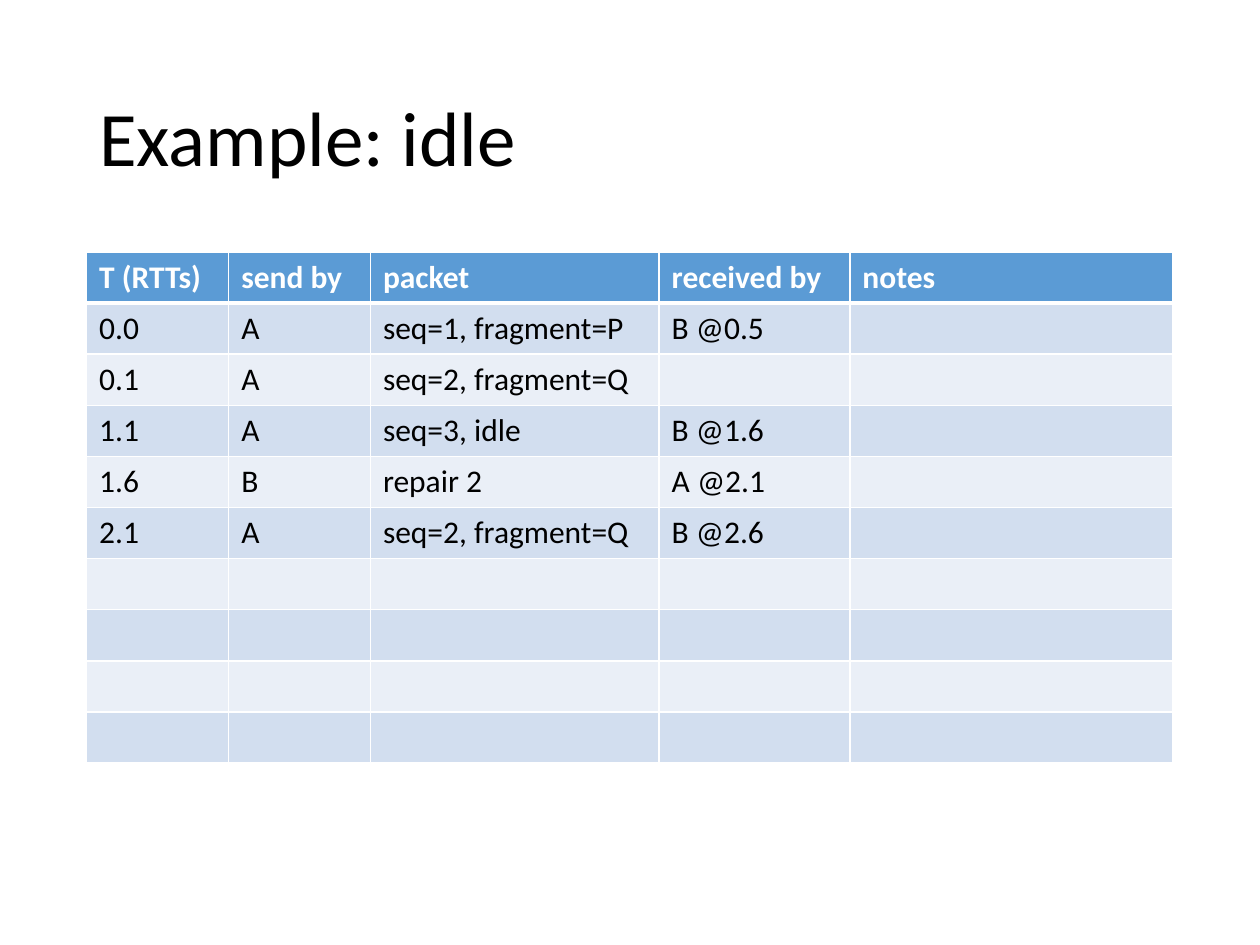
from lxml import etree
from pptx import Presentation
from pptx.dml.color import RGBColor
from pptx.enum.text import MSO_ANCHOR, PP_ALIGN
from pptx.oxml.ns import qn
from pptx.util import Pt

LEFT = PP_ALIGN.LEFT
MIDDLE = MSO_ANCHOR.MIDDLE
BLACK = RGBColor(0x00, 0x00, 0x00)
WHITE = RGBColor(0xFF, 0xFF, 0xFF)
HEADER_BLUE = RGBColor(0x5B, 0x9B, 0xD5)
BANDS = (RGBColor(0xD2, 0xDE, 0xEF), RGBColor(0xEA, 0xEF, 0xF7))
FONT = "Calibri"

TITLE = "Example: idle"
HEADER = ("T (RTTs)", "send by", "packet", "received by", "notes")
EVENTS = [
    ("0.0", "A", "seq=1, fragment=P", "B @0.5", ""),
    ("0.1", "A", "seq=2, fragment=Q", "", ""),
    ("1.1", "A", "seq=3, idle", "B @1.6", ""),
    ("1.6", "B", "repair 2", "A @2.1", ""),
    ("2.1", "A", "seq=2, fragment=Q", "B @2.6", ""),
]
EMPTY_ROWS = 4
COLUMN_WIDTHS = (81.2, 81, 165, 109, 184.8)
ROW_HEIGHT = 29.2
MARGIN = 49.5
CONTENT_WIDTH = sum(COLUMN_WIDTHS)


def style_text(paragraph, size, color, bold=False):
    paragraph.font.size = Pt(size)
    for run in paragraph.runs:
        run.font.name = FONT
        run.font.size = Pt(size)
        run.font.bold = bold
        run.font.color.rgb = color


def add_border(cell, side, width):
    border = etree.SubElement(cell._tc.get_or_add_tcPr(), qn(f"a:ln{side}"), w=str(Pt(width)))
    fill = etree.SubElement(border, qn("a:solidFill"))
    etree.SubElement(fill, qn("a:srgbClr"), val=str(WHITE))


def fill_cell(cell, text, row):
    is_header = row == 0
    widths = {"L": 1, "R": 1, "T": 3 if row == 1 else 1, "B": 3 if is_header else 1}
    for side, width in widths.items():
        add_border(cell, side, width)
    cell.fill.solid()
    cell.fill.fore_color.rgb = HEADER_BLUE if is_header else BANDS[(row - 1) % 2]
    cell.text_frame.text = text
    style_text(cell.text_frame.paragraphs[0], 18, WHITE if is_header else BLACK, is_header)


def main():
    deck = Presentation()
    deck.slide_width, deck.slide_height = Pt(720), Pt(540)
    slide = deck.slides.add_slide(deck.slide_layouts[5])

    title = slide.shapes.title
    title.left, title.top = Pt(MARGIN), Pt(28.75)
    title.width, title.height = Pt(CONTENT_WIDTH), Pt(104.4)
    title.text_frame.text = TITLE
    title.text_frame.vertical_anchor = MIDDLE
    heading = title.text_frame.paragraphs[0]
    heading.alignment = LEFT
    heading.line_spacing = 0.9
    style_text(heading, 44, BLACK)

    rows = [HEADER] + EVENTS + [("",) * len(HEADER)] * EMPTY_ROWS
    timeline = slide.shapes.add_table(
        len(rows), len(HEADER), Pt(MARGIN), Pt(144),
        Pt(CONTENT_WIDTH), Pt(ROW_HEIGHT * len(rows))).table
    for column, width in zip(timeline.columns, COLUMN_WIDTHS):
        column.width = Pt(width)
    for row, texts in enumerate(rows):
        timeline.rows[row].height = Pt(ROW_HEIGHT)
        for column, text in enumerate(texts):
            fill_cell(timeline.cell(row, column), text, row)

    deck.save("out.pptx")


if __name__ == "__main__":
    main()
